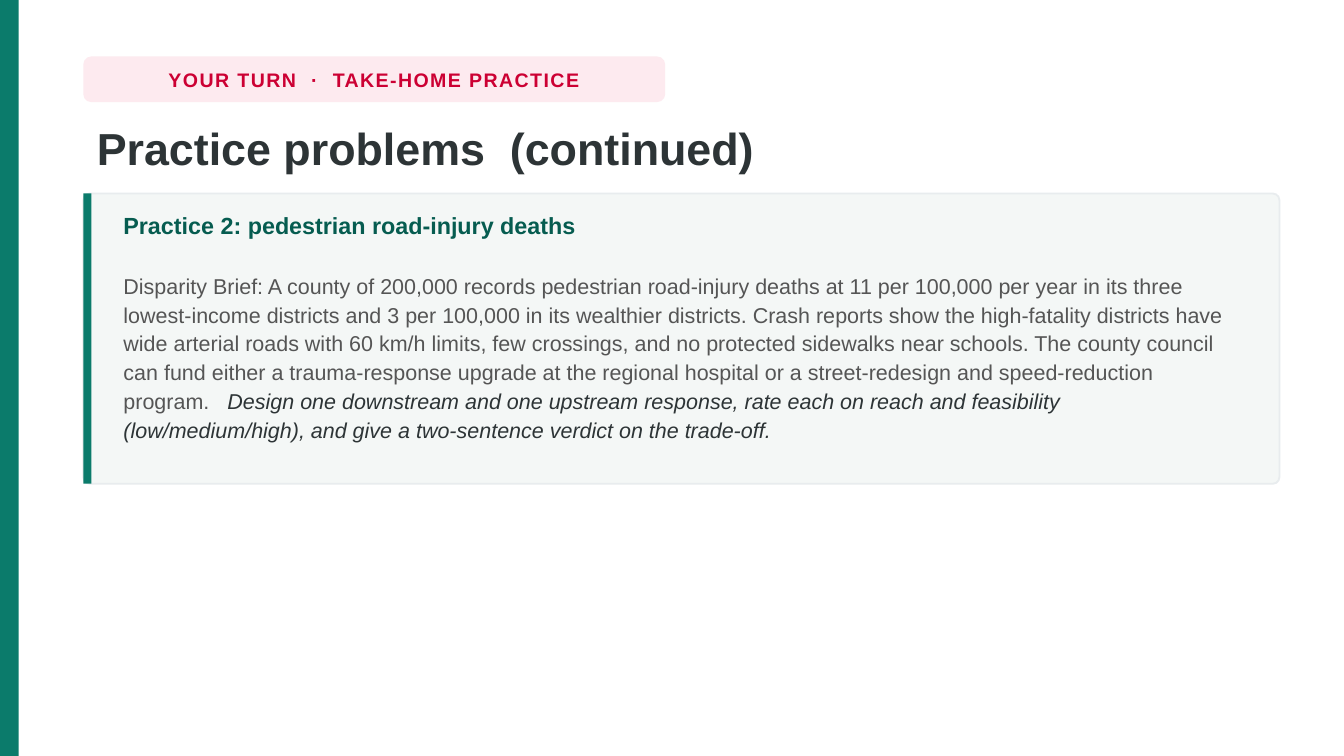
from pptx import Presentation
from pptx.dml.color import RGBColor
from pptx.enum import shapes, text
from pptx.util import Inches, Pt

# Content
LABEL = "YOUR TURN  ·  TAKE-HOME PRACTICE"
TITLE = "Practice problems  (continued)"
HEAD = "Practice 2: pedestrian road-injury deaths"
BRIEF = (
    "Disparity Brief: A county of 200,000 records pedestrian road-injury deaths "
    "at 11 per 100,000 per year in its three lowest-income districts and 3 per "
    "100,000 in its wealthier districts. Crash reports show the high-fatality "
    "districts have wide arterial roads with 60 km/h limits, few crossings, and "
    "no protected sidewalks near schools. The county council can fund either a "
    "trauma-response upgrade at the regional hospital or a street-redesign and "
    "speed-reduction program.   "
)
TASK = (
    "Design one downstream and one upstream response, rate each on reach and "
    "feasibility (low/medium/high), and give a two-sentence verdict on the trade-off."
)

# Formats
GREEN, INK = "0B7B6B", "2D3436"
STYLES = {
    "label": dict(size=Pt(10.5), bold=True, color="CC0033"),
    "title": dict(size=Pt(24), bold=True, color=INK),
    "head": dict(size=Pt(12.5), bold=True, color="065C50"),
    "brief": dict(size=Pt(11.5), bold=False, color="555555"),
    "task": dict(size=Pt(11.5), bold=False, italic=True, color=INK),
}

# Layout: a 16:9 slide
WIDE = 10
HIGH = WIDE * 9 / 16
LEFT, SPAN = 0.62, 8.9
CARD_TOP, CARD_HIGH = 1.44, 2.16
PAD_X, PAD_Y = 0.2, 0.08

deck = Presentation()
deck.slide_width, deck.slide_height = Inches(WIDE), Inches(HIGH)
slide = deck.slides.add_slide(deck.slide_layouts[5])


def tint(color, code):
    color.rgb = RGBColor.from_string(code)


def add_box(x, y, w, h, fill, radius=None, edge=None):
    kind = shapes.MSO_SHAPE.RECTANGLE if radius is None else shapes.MSO_SHAPE.ROUNDED_RECTANGLE
    box = slide.shapes.add_shape(kind, *map(Inches, (x, y, w, h)))
    box.shadow.inherit = False
    if radius is not None:
        box.adjustments[0] = radius / min(w, h)
    box.fill.solid()
    tint(box.fill.fore_color, fill)
    if edge:
        tint(box.line.color, edge)
        box.line.width = Pt(1)
    else:
        box.line.fill.background()
    return box


def add_run(para, words, style):
    run = para.add_run()
    run.text = words
    run.font.name = "Arial"
    for key, value in STYLES[style].items():
        if key == "color":
            tint(run.font.color, value)
        else:
            setattr(run.font, key, value)
    return run


def set_para(para, **form):
    for key, value in form.items():
        setattr(para, key, value)
    return para


# Side band and label
add_box(0, 0, 0.14, HIGH, GREEN)
tag = add_box(LEFT, 0.42, 4.33, 0.34, "FDEAEF", 0.06)
frame = tag.text_frame
frame.word_wrap = False
frame.vertical_anchor = text.MSO_ANCHOR.MIDDLE
para = set_para(frame.paragraphs[0], alignment=text.PP_ALIGN.CENTER)
run = add_run(para, LABEL, "label")
run._r.get_or_add_rPr().set("spc", "80")

# Title
title = slide.shapes.title
title.left, title.top, title.width, title.height = map(Inches, (LEFT, 0.84, SPAN, 0.56))
frame = title.text_frame
frame.auto_size = text.MSO_AUTO_SIZE.NONE
frame.vertical_anchor = text.MSO_ANCHOR.TOP
para = set_para(frame.paragraphs[0], alignment=text.PP_ALIGN.LEFT, line_spacing=1.02)
add_run(para, TITLE, "title")

# Practice card
add_box(LEFT, CARD_TOP, SPAN, CARD_HIGH, "F4F7F6", 0.05, "E8ECEE")
add_box(LEFT, CARD_TOP, 0.06, CARD_HIGH, GREEN)
body = slide.shapes.add_textbox(
    Inches(LEFT + PAD_X), Inches(CARD_TOP + PAD_Y),
    Inches(8.48), Inches(CARD_HIGH - 2 * PAD_Y))
frame = body.text_frame
frame.word_wrap = True
add_run(set_para(frame.paragraphs[0], line_spacing=1.0), HEAD, "head")
para = set_para(frame.add_paragraph(), line_spacing=1.12, space_before=Pt(16.5))
add_run(para, BRIEF, "brief")
add_run(para, TASK, "task")

deck.save("out.pptx")
